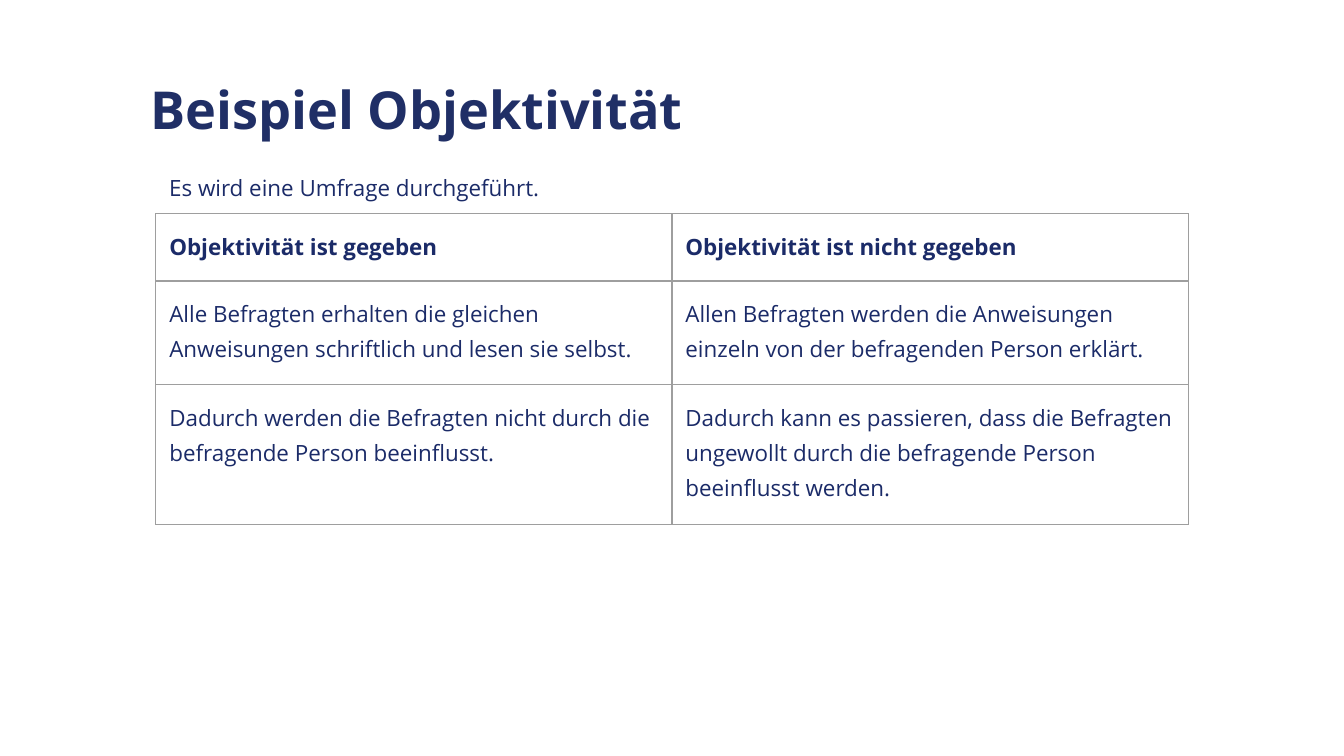
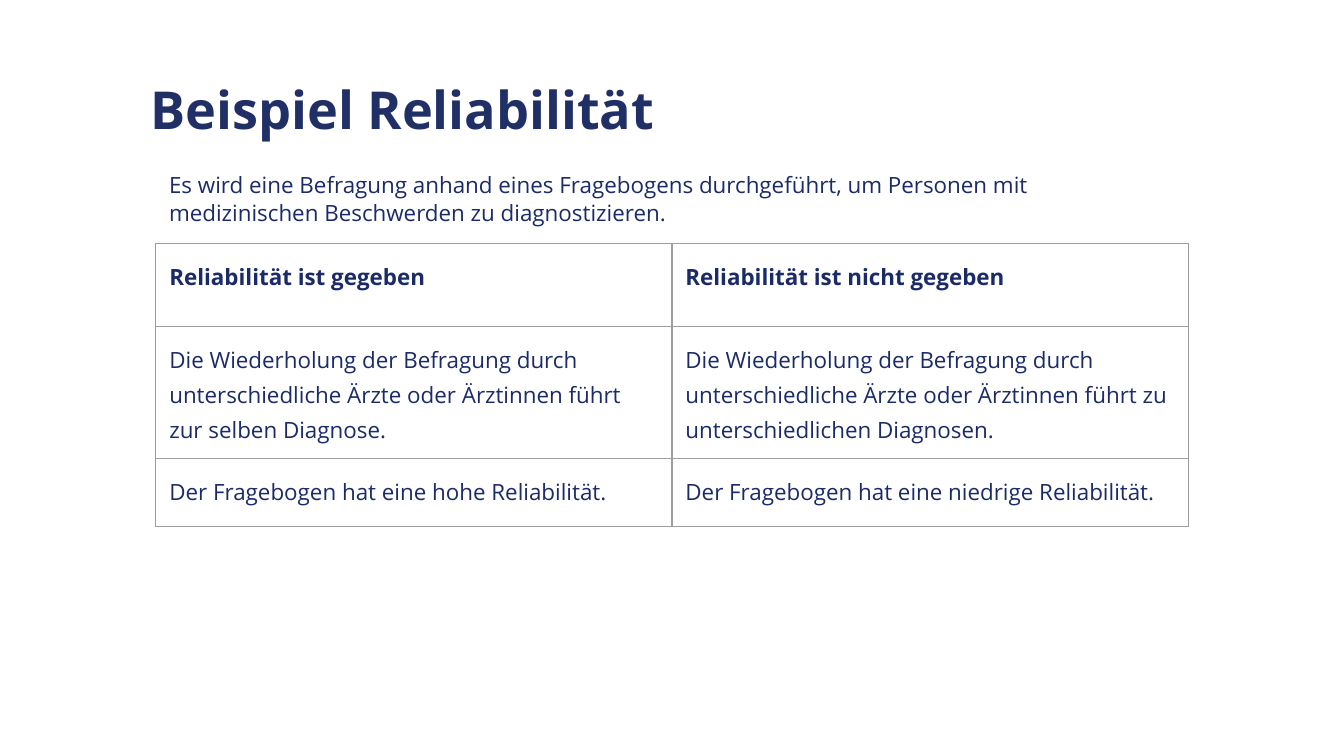
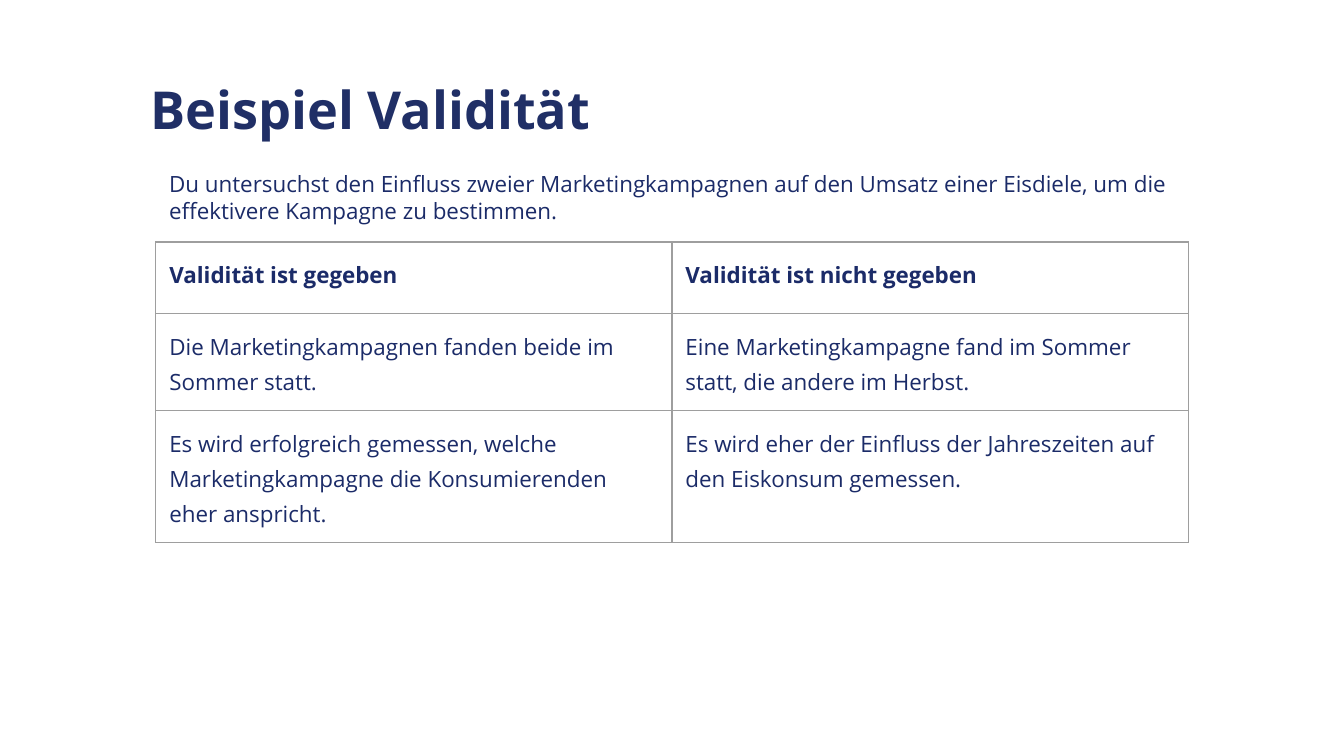
from lxml.etree import SubElement
from pptx import Presentation
from pptx.dml.color import RGBColor
from pptx.enum.text import MSO_ANCHOR, MSO_AUTO_SIZE, PP_ALIGN
from pptx.oxml.ns import qn
from pptx.util import Pt

COLORS = {"title": "202F66", "text": "1B2B68", "border": "9E9E9E"}
FONT = "Open Sans"
INSET = 7.2
TABLE_LEFT = 83.5
COLUMN_WIDTH = 276.5
TITLE_BOX = (73.5, 35.3, 566.6, 45.4)

EXAMPLES = [
    {
        "title": "Beispiel Objektivität",
        "intro": "Es wird eine Umfrage durchgeführt.",
        "intro_box": (TABLE_LEFT, 85.7, 236.2, 28.8),
        "table_top": 114.5,
        "row_heights": [36, 55.5, 75],
        "rows": [
            ("Objektivität ist gegeben", "Objektivität ist nicht gegeben"),
            ("Alle Befragten erhalten die gleichen Anweisungen schriftlich und lesen sie selbst.",
             "Allen Befragten werden die Anweisungen einzeln von der befragenden Person erklärt."),
            ("Dadurch werden die Befragten nicht durch die befragende Person beeinflusst.",
             "Dadurch kann es passieren, dass die Befragten ungewollt durch die befragende Person "
             "beeinflusst werden."),
        ],
    },
    {
        "title": "Beispiel Reliabilität",
        "intro": "Es wird eine Befragung anhand eines Fragebogens durchgeführt, um Personen mit "
                 "medizinischen Beschwerden zu diagnostizieren.",
        "intro_box": (TABLE_LEFT, 84.3, 556.5, 46),
        "table_top": 130.3,
        "row_heights": [44.6, 54.7, 36.5],
        "rows": [
            ("Reliabilität ist gegeben", "Reliabilität ist nicht gegeben"),
            ("Die Wiederholung der Befragung durch unterschiedliche Ärzte oder Ärztinnen führt zur "
             "selben Diagnose.",
             "Die Wiederholung der Befragung durch unterschiedliche Ärzte oder Ärztinnen führt zu "
             "unterschiedlichen Diagnosen."),
            ("Der Fragebogen hat eine hohe Reliabilität.",
             "Der Fragebogen hat eine niedrige Reliabilität."),
        ],
    },
    {
        "title": "Beispiel Validität",
        "intro": "Du untersuchst den Einfluss zweier Marketingkampagnen auf den Umsatz einer Eisdiele, "
                 "um die effektivere Kampagne zu bestimmen.",
        "intro_box": (TABLE_LEFT, 83.6, 553, 46),
        "table_top": 129.6,
        "row_heights": [38.2, 35.3, 48.2],
        "rows": [
            ("Validität ist gegeben", "Validität ist nicht gegeben"),
            ("Die Marketingkampagnen fanden beide im Sommer statt.",
             "Eine Marketingkampagne fand im Sommer statt, die andere im Herbst."),
            ("Es wird erfolgreich gemessen, welche Marketingkampagne die Konsumierenden eher anspricht.",
             "Es wird eher der Einfluss der Jahreszeiten auf den Eiskonsum gemessen."),
        ],
    },
]


class ExampleDeck:
    """Hold the shared style and the current slide."""

    def __init__(self):
        self.deck = Presentation()
        self.deck.slide_width, self.deck.slide_height = Pt(720), Pt(405)
        self.page = None

    def add_page(self):
        self.page = self.deck.slides.add_slide(self.deck.slide_layouts[5])

    def apply(self, target, values):
        for name, value in values.items():
            setattr(target, name, value)

    def fill_text(self, frame, text, color="text", size=12, bold=False, spacing=1.15):
        frame.text = text
        para = frame.paragraphs[0]
        self.apply(para, {"alignment": PP_ALIGN.LEFT, "line_spacing": spacing})
        span = para.runs[0]
        self.apply(span.font, {"name": FONT, "size": Pt(size), "bold": bold})
        span.font.color.rgb = RGBColor.from_string(COLORS[color])

    def inset(self, target):
        sides = ("left", "top", "right", "bottom")
        self.apply(target, {f"margin_{side}": Pt(INSET) for side in sides})

    def title(self, text):
        box = self.page.shapes.title
        self.apply(box, dict(zip(("left", "top", "width", "height"), map(Pt, TITLE_BOX))))
        frame = box.text_frame
        self.inset(frame)
        self.apply(frame, {"word_wrap": True, "auto_size": MSO_AUTO_SIZE.NONE,
                           "vertical_anchor": MSO_ANCHOR.MIDDLE})
        self.fill_text(frame, text, "title", 28, True, 1.0)

    def intro(self, text, place):
        frame = self.page.shapes.add_textbox(*map(Pt, place)).text_frame
        self.inset(frame)
        self.apply(frame, {"word_wrap": True, "auto_size": MSO_AUTO_SIZE.SHAPE_TO_FIT_TEXT})
        self.fill_text(frame, text, spacing=1.02)

    def border(self, cell):
        properties = cell._tc.get_or_add_tcPr()
        for side in ("lnL", "lnR", "lnT", "lnB"):
            line = SubElement(properties, qn(f"a:{side}"), w=str(Pt(0.75)))
            fill = SubElement(line, qn("a:solidFill"))
            SubElement(fill, qn("a:srgbClr"), val=COLORS["border"])

    def table(self, rows, top, heights):
        columns = len(rows[0])
        place = (TABLE_LEFT, top, columns * COLUMN_WIDTH, sum(heights))
        table = self.page.shapes.add_table(len(rows), columns, *map(Pt, place)).table
        self.apply(table, {"first_row": False, "horz_banding": False})
        for row_index, (texts, height) in enumerate(zip(rows, heights)):
            table.rows[row_index].height = Pt(height)
            for column_index, text in enumerate(texts):
                cell = table.cell(row_index, column_index)
                self.inset(cell)
                self.border(cell)
                cell.fill.background()
                self.fill_text(cell.text_frame, text, bold=row_index == 0)


def main():
    builder = ExampleDeck()
    for example in EXAMPLES:
        builder.add_page()
        builder.title(example["title"])
        builder.table(example["rows"], example["table_top"], example["row_heights"])
        builder.intro(example["intro"], example["intro_box"])
    builder.deck.save("out.pptx")


if __name__ == "__main__":
    main()
